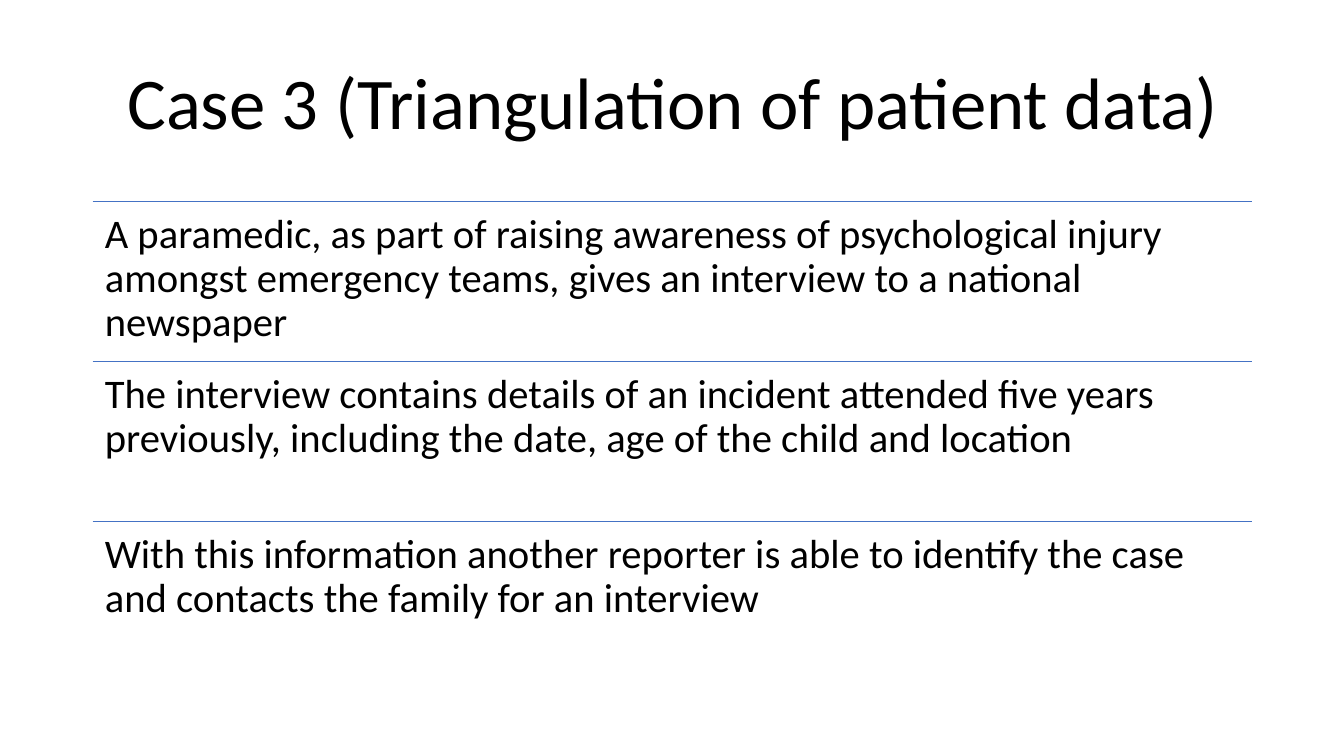
import dataclasses

import lxml.etree
import pptx
import pptx.dml.color
import pptx.enum.shapes
import pptx.enum.text
import pptx.oxml.ns
import pptx.util


@dataclasses.dataclass(frozen=True)
class Theme:
    """Colours, font and type sizes of the slide."""

    font: str = "Calibri"
    text: str = "000000"
    rule: str = "4472C4"
    title_size: int = 52
    body_size: int = 29
    line_spacing: float = 0.9
    rule_width: int = 1


THEME = Theme()
EMU_PER_PX = 9144
TITLE = "Case 3 (Triangulation of patient data)"
STATEMENTS = (
    "A paramedic, as part of raising awareness of psychological injury "
    "amongst emergency teams, gives an interview to a national newspaper",
    "The interview contains details of an incident attended five years "
    "previously, including the date, age of the child and location",
    "With this information another reporter is able to identify the case "
    "and contacts the family for an interview",
)


def px(value):
    """Turn px into EMU."""
    return pptx.util.Emu(round(value * EMU_PER_PX))


def set_text(sp, text, size, align, inset_x, inset_y):
    """Write one formatted, top-anchored paragraph into a shape."""
    tf = sp.text_frame
    tf.word_wrap = True
    tf.auto_size = pptx.enum.text.MSO_AUTO_SIZE.NONE
    tf.vertical_anchor = pptx.enum.text.MSO_ANCHOR.TOP
    tf.margin_left = tf.margin_right = px(inset_x)
    tf.margin_top = tf.margin_bottom = px(inset_y)
    tf.text = text
    p = tf.paragraphs[0]
    p.alignment = align
    p.line_spacing = THEME.line_spacing
    p.space_before = pptx.util.Pt(0)
    r = p.runs[0]
    r.font.name = THEME.font
    r.font.size = pptx.util.Pt(size)
    r.font.color.rgb = pptx.dml.color.RGBColor.from_string(THEME.text)


def add_title(slide, left, top, width, height):
    """Place the title placeholder in its box."""
    sp = slide.shapes.title
    sp.left, sp.top, sp.width, sp.height = map(px, (left, top, width, height))
    set_text(sp, TITLE, THEME.title_size, pptx.enum.text.PP_ALIGN.CENTER, 10, 5)


def add_rule(slide, left, top, width):
    """Draw a horizontal rule."""
    line = slide.shapes.add_connector(
        pptx.enum.shapes.MSO_CONNECTOR.STRAIGHT,
        px(left), px(top), px(left + width), px(top),
    )
    line.line.color.rgb = pptx.dml.color.RGBColor.from_string(THEME.rule)
    line.line.width = pptx.util.Pt(THEME.rule_width)
    lxml.etree.SubElement(line.element.spPr, pptx.oxml.ns.qn("a:effectLst"))


def add_statements(slide, left, top, width, height):
    """Stack the statements in equal rows, each under a rule."""
    row = height / len(STATEMENTS)
    for i, text in enumerate(STATEMENTS):
        y = top + i * row
        add_rule(slide, left, y, width)
        sp = slide.shapes.add_textbox(px(left), px(y), px(width), px(row))
        set_text(sp, text, THEME.body_size, pptx.enum.text.PP_ALIGN.LEFT, 12, 12)


def main():
    """Build and save the slide."""
    prs = pptx.Presentation()
    prs.slide_width, prs.slide_height = px(1333), px(750)
    slide = prs.slides.add_slide(prs.slide_layouts.get_by_name("Title Only"))
    add_title(slide, 92, 61, 1150, 124)
    add_statements(slide, 92, 200, 1150, 476)
    prs.save("out.pptx")


if __name__ == "__main__":
    main()
